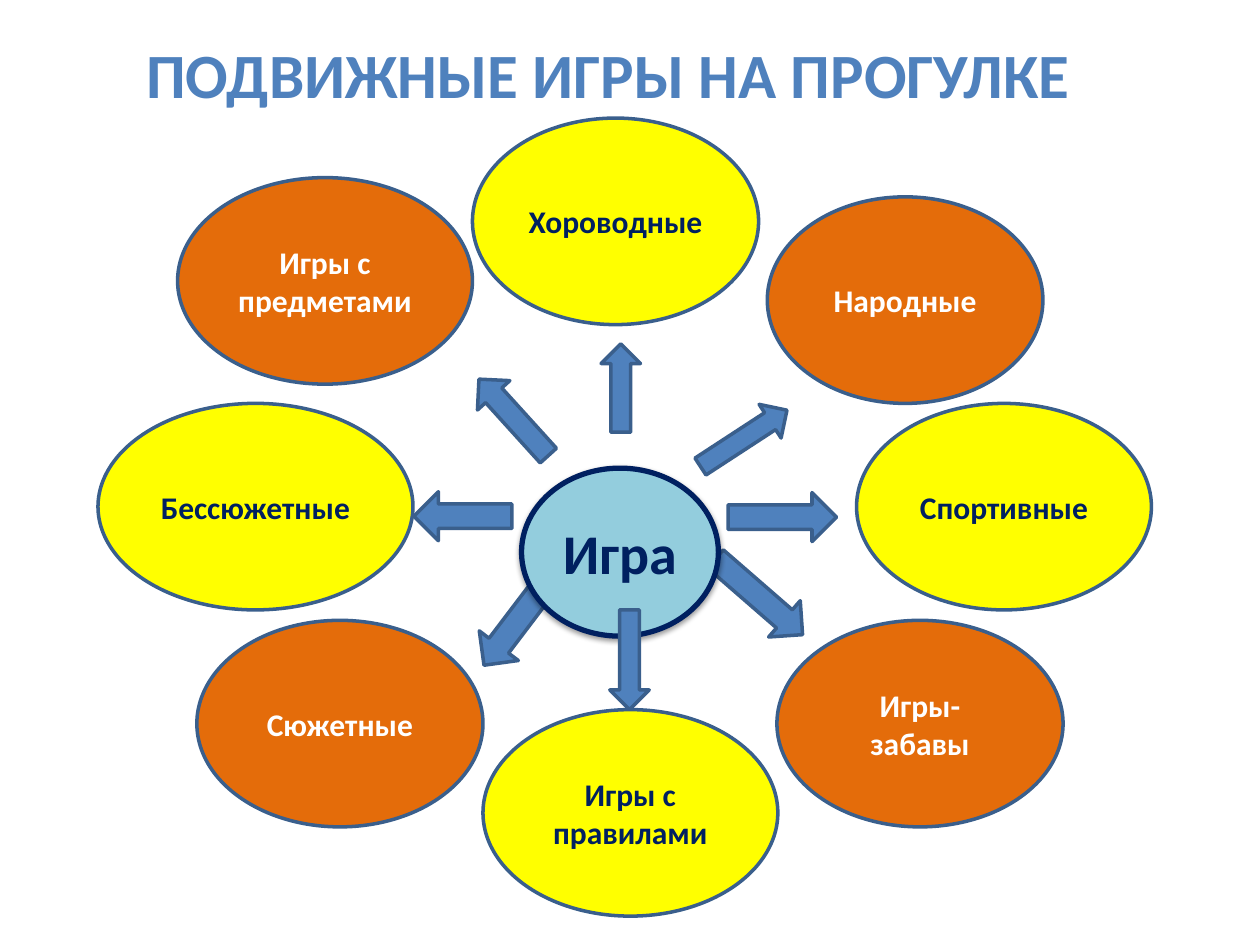
from lxml import etree
from pptx import Presentation
from pptx.dml.color import RGBColor
from pptx.enum import shapes, text
from pptx.oxml import ns
from pptx.util import Pt

BLUE, EDGE, NAVY = "4F81BD", "3A5F8C", "002060"
YELLOW, ORANGE, WHITE = "FFFF00", "E46C0A", "FFFFFF"
KIND = shapes.MSO_SHAPE
BUBBLE_HEIGHT = 118

BUBBLES = [
    ("Спортивные", 489.5, 230.5, 168.5, YELLOW),
    ("Игры-забавы", 444, 354.5, 163.5, ORANGE),
    ("Игры с правилами", 276, 405.5, 168.5, YELLOW),
    ("Сюжетные", 112.5, 354.5, 163.5, ORANGE),
    ("Народные", 438.5, 112.5, 157.5, ORANGE),
    ("Бессюжетные", 56, 230.5, 180, YELLOW),
    ("Игры с предметами", 101.5, 101.5, 168.5, ORANGE),
    ("Хороводные", 270, 67.5, 163.5, YELLOW),
]
ARROWS_BEHIND = [
    (KIND.DOWN_ARROW, (250.5, 267, 28, 56), 90),
    (KIND.DOWN_ARROW, (283, 319.5, 28, 67.5), 37.2),
    (KIND.DOWN_ARROW, (420, 308, 27.5, 66), 311),
]
ARROWS_FRONT = [
    (KIND.UP_ARROW, (343.5, 196.5, 22.5, 50.5), 0),
    (KIND.RIGHT_ARROW, (416, 281.5, 62, 28), 0),
    (KIND.RIGHT_ARROW, (395.5, 239, 59, 23), 326.9),
    (KIND.DOWN_ARROW, (348.5, 348.5, 22.5, 57), 0),
    (KIND.LEFT_ARROW, (264, 226, 59, 25), 47.8),
]


def color(value):
    return RGBColor.from_string(value)


def write(frame, words, size, ink):
    frame.text = words
    para = frame.paragraphs[0]
    para.alignment = text.PP_ALIGN.CENTER
    font = para.runs[0].font
    font.name, font.size, font.bold = "Calibri", Pt(size), True
    font.color.rgb = color(ink)


def add_figure(page, kind, box, fill, edge=EDGE, weight=2):
    figure = page.shapes.add_shape(kind, *map(Pt, box))
    figure.shadow.inherit = False
    figure.fill.solid()
    figure.fill.fore_color.rgb = color(fill)
    figure.line.color.rgb = color(edge)
    figure.line.width = Pt(weight)
    return figure


def add_ellipse(page, box, words, size, ink, *style):
    ellipse = add_figure(page, KIND.OVAL, box, *style)
    frame = ellipse.text_frame
    frame.word_wrap = True
    frame.vertical_anchor = text.MSO_ANCHOR.MIDDLE
    write(frame, words, size, ink)
    return ellipse


def add_arrows(page, arrows):
    for kind, box, angle in arrows:
        add_figure(page, kind, box, BLUE).rotation = angle


def add_hub(page, box):
    hub = add_ellipse(page, box, "Игра", 32, NAVY, "93CDDD", NAVY, 3)
    effects = hub._element.spPr.find(ns.qn("a:effectLst"))
    shadow = etree.SubElement(effects, ns.qn("a:outerShdw"), blurRad=str(Pt(3.1)),
                              dist=str(Pt(1.6)), dir="5400000", rotWithShape="0")
    tint = etree.SubElement(shadow, ns.qn("a:srgbClr"), val="000000")
    etree.SubElement(tint, ns.qn("a:alpha"), val="38000")


def add_bubbles(page):
    for words, left, top, width, fill in BUBBLES:
        ink = NAVY if fill == YELLOW else WHITE
        add_ellipse(page, (left, top, width, BUBBLE_HEIGHT), words, 18, ink, fill)


def add_title(page, box):
    frame = page.shapes.add_textbox(*map(Pt, box)).text_frame
    frame.word_wrap = False
    frame.auto_size = text.MSO_AUTO_SIZE.SHAPE_TO_FIT_TEXT
    write(frame, "ПОДВИЖНЫЕ ИГРЫ НА ПРОГУЛКЕ", 36, BLUE)


def main():
    deck = Presentation()
    deck.slide_width, deck.slide_height = Pt(720), Pt(540)
    page = deck.slides.add_slide(deck.slide_layouts[6])
    add_title(page, (74, 16.5, 547, 51))
    add_arrows(page, ARROWS_BEHIND)
    add_hub(page, (298, 267.5, 112.5, 96))
    add_arrows(page, ARROWS_FRONT)
    add_bubbles(page)
    deck.save("out.pptx")


if __name__ == "__main__":
    main()
